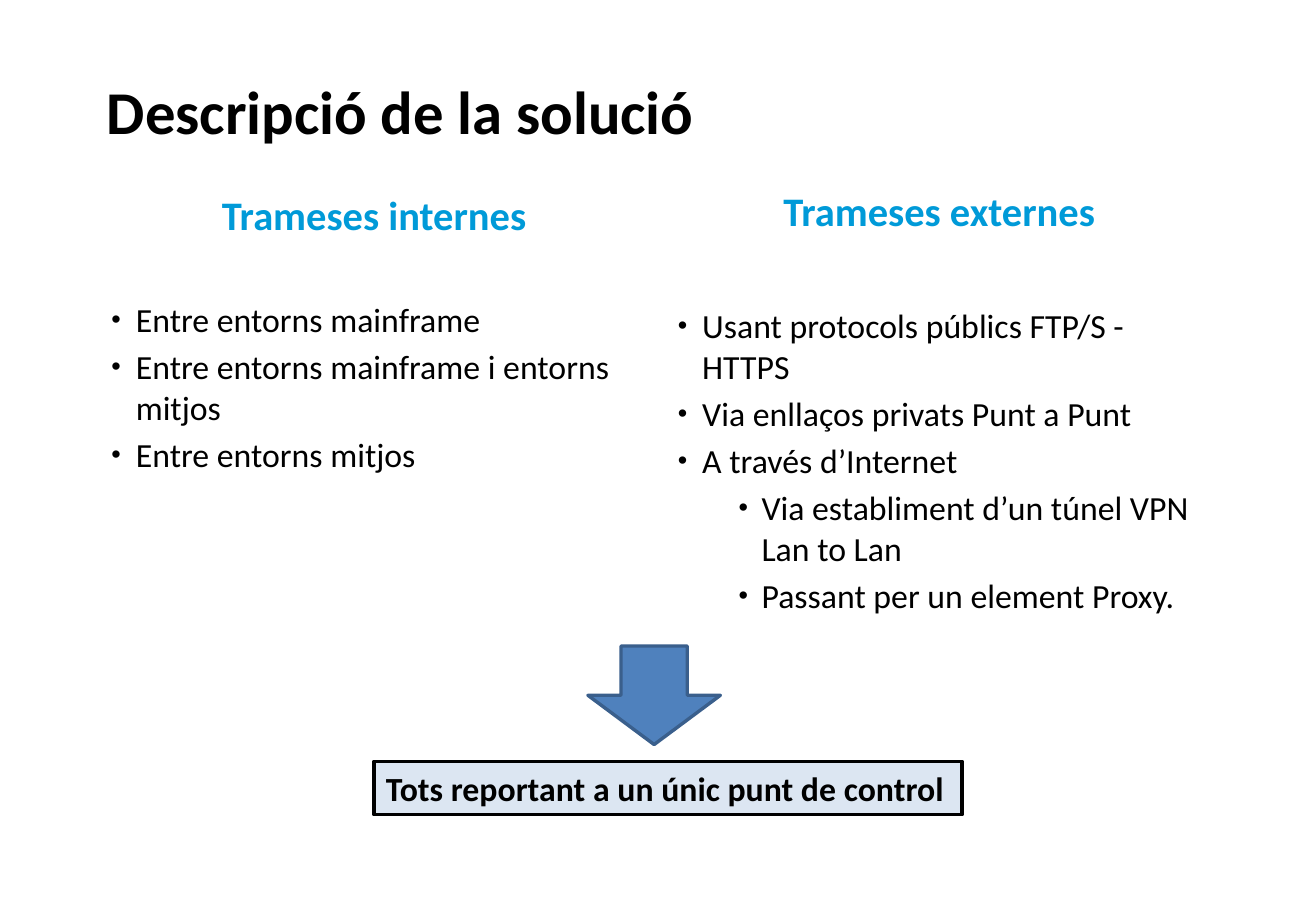
from lxml import etree
from pptx import Presentation, util as u
from pptx.dml.color import RGBColor
from pptx.enum import shapes, text
from pptx.oxml.ns import qn

Cm = u.Cm
BLACK = "000000"
ACCENT = "009AD8"


def tint(code):
    return RGBColor.from_string(code)


def style(para, size, color=BLACK, bold=False):
    for run in para.runs:
        run.font.name = "Calibri"
        run.font.size = u.Pt(size)
        run.font.bold = bold
        run.font.color.rgb = tint(color)


def bullet(para, left, hang):
    props = para._p.get_or_add_pPr()
    props.set("marL", str(Cm(left)))
    props.set("indent", str(-Cm(hang)))
    etree.SubElement(props, qn("a:buSzPct"), val="80000")
    etree.SubElement(props, qn("a:buFont"), typeface="Arial")
    etree.SubElement(props, qn("a:buChar"), char="•")


def title(slide, box, words):
    head = slide.shapes.title
    head.left, head.top, head.width, head.height = map(Cm, box)
    frame = head.text_frame
    frame.text = words
    frame.auto_size = text.MSO_AUTO_SIZE.NONE
    frame.vertical_anchor = text.MSO_ANCHOR.TOP
    frame.paragraphs[0].alignment = text.PP_ALIGN.LEFT
    style(frame.paragraphs[0], 36, bold=True)


def column(slide, box, drop, name, items):
    left, top, width, height = box
    label = slide.shapes.add_textbox(*map(Cm, (left, top, width, 1.75))).text_frame
    label.word_wrap = True
    label.text = name
    label.paragraphs[0].alignment = text.PP_ALIGN.CENTER
    style(label.paragraphs[0], 24, ACCENT, True)

    body = slide.shapes.add_textbox(*map(Cm, (left, top + drop, width, height - drop))).text_frame
    body.word_wrap = True
    body.text = "\n".join(words for level, words in items)
    for para, (level, words) in zip(body.paragraphs, items):
        para.level = level
        para.space_before = u.Pt(4)
        bullet(para, *((0.51, 0.51), (1.75, 0.48))[level])
        style(para, 20)


def block(slide, kind, box, fill, edge):
    shape = slide.shapes.add_shape(kind, *map(Cm, box))
    shape.shadow.inherit = False
    shape.fill.solid()
    shape.fill.fore_color.rgb = tint(fill)
    shape.line.color.rgb = tint(edge)
    shape.line.width = u.Pt(2)
    return shape


def result(slide, box, words):
    left, top, width, height = box
    kinds = shapes.MSO_SHAPE
    block(slide, kinds.DOWN_ARROW, (left + 4.47, top, 2.77, 2.06), "4F81BD", "3A5F8C")
    bar = block(slide, kinds.RECTANGLE, (left, top + height - 1.12, width, 1.12), "DCE6F2", BLACK)
    frame = bar.text_frame
    frame.word_wrap = True
    frame.text = words
    frame.paragraphs[0].alignment = text.PP_ALIGN.LEFT
    style(frame.paragraphs[0], 20, bold=True)


def main():
    deck = Presentation()
    deck.slide_width, deck.slide_height = Cm(27.51), Cm(19.05)
    slide = deck.slides.add_slide(deck.slide_layouts.get_by_name("Title Only"))
    title(slide, (1.98, 1.42, 23.29, 2.26), "Descripció de la solució")
    column(slide, (2.08, 3.84, 11.48, 6.78), 2.28, "Trameses internes", [
        (0, "Entre entorns mainframe"),
        (0, "Entre entorns mainframe i entorns mitjos"),
        (0, "Entre entorns mitjos"),
    ])
    column(slide, (13.92, 3.76, 11.43, 8.97), 2.49, "Trameses externes", [
        (0, "Usant protocols públics FTP/S - HTTPS"),
        (0, "Via enllaços privats Punt a Punt"),
        (0, "A través d’Internet"),
        (1, "Via establiment d’un túnel VPN Lan to Lan"),
        (1, "Passant per un element Proxy."),
    ])
    result(slide, (7.82, 13.51, 12.29, 3.53), "Tots reportant a un únic punt de control")
    deck.save("out.pptx")


if __name__ == "__main__":
    main()
